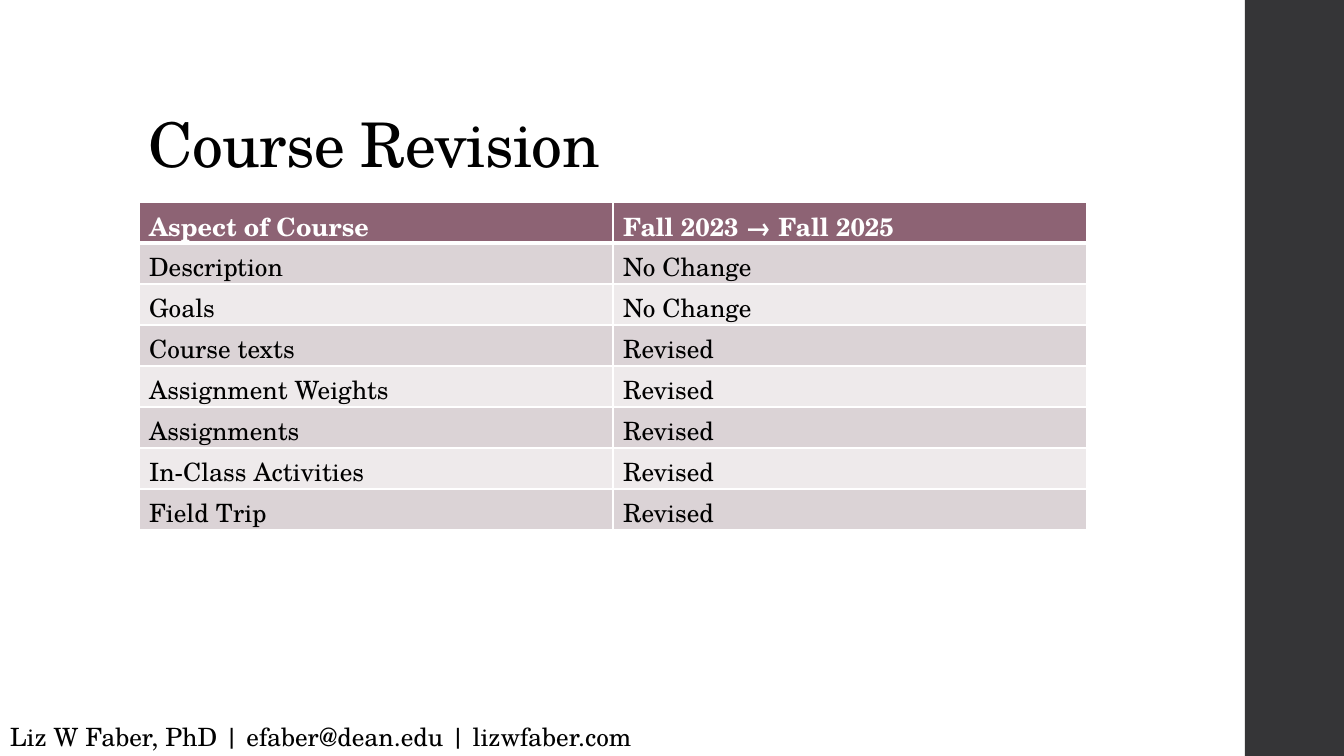
from lxml import etree
from pptx import Presentation
from pptx import util as u
from pptx.dml.color import RGBColor
from pptx.enum import shapes, text
from pptx.oxml import ns

EMU_PER_INCH = 914400
PX_PER_INCH = 100.8
FONT = "TeX Gyre Schola"
BLACK = RGBColor(0x00, 0x00, 0x00)
WHITE = RGBColor(0xFF, 0xFF, 0xFF)
CHARCOAL = RGBColor(0x35, 0x35, 0x37)
MAUVE = RGBColor(0x8D, 0x63, 0x74)
BAND_DARK = RGBColor(0xDB, 0xD3, 0xD6)
BAND_LIGHT = RGBColor(0xEE, 0xEA, 0xEB)

REVISIONS = [
    ("Aspect of Course", "Fall 2023 → Fall 2025"),
    ("Description", "No Change"),
    ("Goals", "No Change"),
    ("Course texts", "Revised"),
    ("Assignment Weights", "Revised"),
    ("Assignments", "Revised"),
    ("In-Class Activities", "Revised"),
    ("Field Trip", "Revised"),
]


def px(length):
    """Turn a length in px into EMU."""
    return u.Emu(round(length * EMU_PER_INCH / PX_PER_INCH))


def add_run(paragraph, words, size, color=BLACK, bold=False):
    """Add one styled run to a paragraph."""
    run = paragraph.add_run()
    run.text = words
    run.font.name = FONT
    run.font.size = u.Pt(size)
    run.font.bold = bold
    run.font.color.rgb = color
    return run


def add_text_box(slide, box, words, size, anchor):
    """Add a wrapping text box and return its paragraph and run."""
    frame = slide.shapes.add_textbox(*map(px, box)).text_frame
    frame.word_wrap = True
    frame.vertical_anchor = anchor
    paragraph = frame.paragraphs[0]
    return paragraph, add_run(paragraph, words, size)


def add_title(slide, words):
    """Add the slide title, tightly spaced and resting on its lower edge."""
    box = (139, 40, 1068, 146)
    paragraph, run = add_text_box(slide, box, words, 44, text.MSO_ANCHOR.BOTTOM)
    paragraph.line_spacing = 0.9
    run.font._element.set("spc", "-50")


def add_side_bar(slide):
    """Add the dark bar along the right edge."""
    shape = slide.shapes.add_shape(
        shapes.MSO_SHAPE.RECTANGLE, px(1245), px(0), px(99), px(756))
    shape.shadow.inherit = False
    shape.fill.solid()
    shape.fill.fore_color.rgb = CHARCOAL
    shape.line.fill.background()


def set_borders(cell, top, bottom):
    """Give a cell white borders with the top and bottom widths in points."""
    properties = cell._tc.get_or_add_tcPr()
    widths = {"a:lnL": 1, "a:lnR": 1, "a:lnT": top, "a:lnB": bottom}
    for tag, width in widths.items():
        line = etree.SubElement(properties, ns.qn(tag), w=str(u.Pt(width)))
        fill = etree.SubElement(line, ns.qn("a:solidFill"))
        etree.SubElement(fill, ns.qn("a:srgbClr"), val=str(WHITE))


def add_revision_table(slide, rows):
    """Add the banded table with a bold header row."""
    column_width, row_height = 474, 41
    columns = len(rows[0])
    table = slide.shapes.add_table(
        len(rows), columns, px(139), px(202),
        px(column_width * columns), px(row_height * len(rows))).table
    for row, entries in enumerate(rows):
        header = row == 0
        band = BAND_DARK if row % 2 else BAND_LIGHT
        for column, words in enumerate(entries):
            cell = table.cell(row, column)
            set_borders(cell, 3 if row == 1 else 1, 3 if header else 1)
            cell.fill.solid()
            cell.fill.fore_color.rgb = MAUVE if header else band
            add_run(cell.text_frame.paragraphs[0], words, 18,
                    WHITE if header else BLACK, header)


def main():
    """Build the slide and save it."""
    presentation = Presentation()
    presentation.slide_width = px(1344)
    presentation.slide_height = px(756)
    slide = presentation.slides.add_slide(presentation.slide_layouts[6])
    add_side_bar(slide)
    add_title(slide, "Course Revision")
    add_revision_table(slide, REVISIONS)
    add_text_box(slide, (0, 716, 700, 40),
                 "Liz W Faber, PhD | efaber@dean.edu | lizwfaber.com",
                 18, text.MSO_ANCHOR.TOP)
    presentation.save("out.pptx")


if __name__ == "__main__":
    main()
